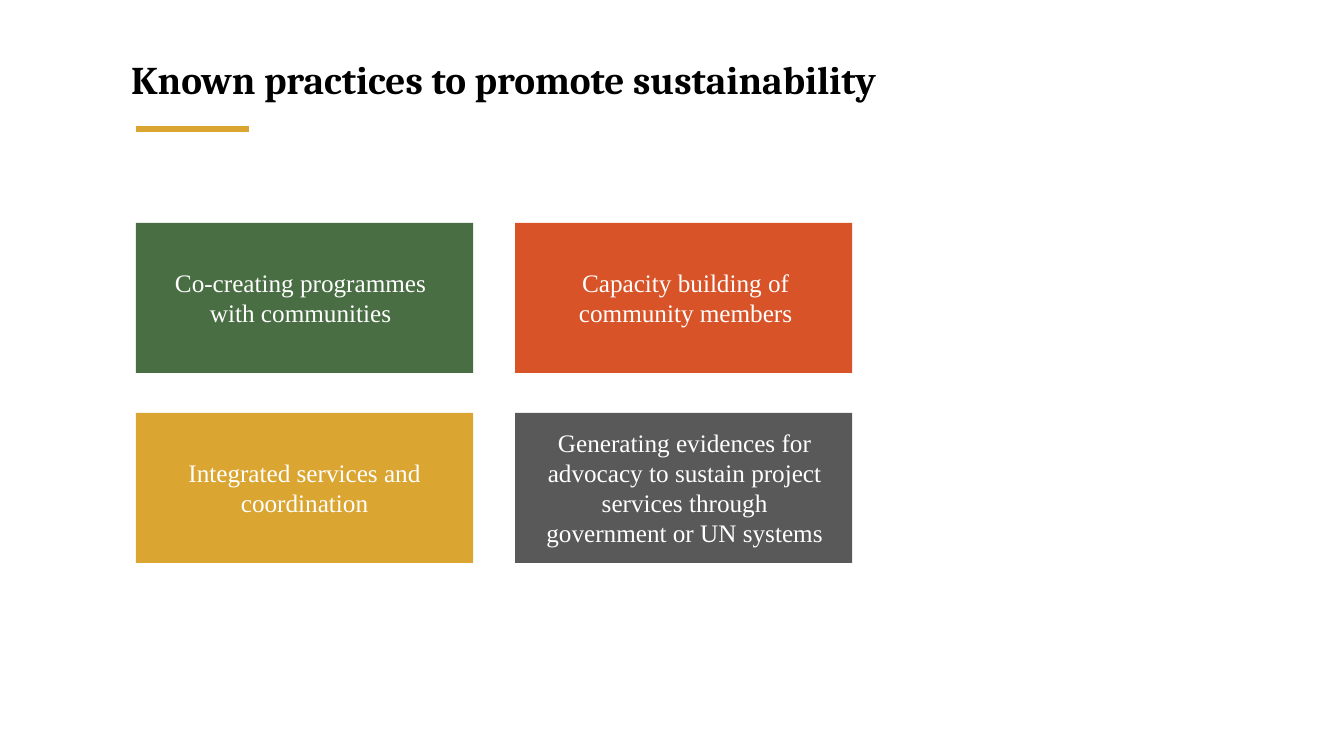
from lxml import etree
from pptx import Presentation
from pptx import util as u
from pptx.dml.color import RGBColor
from pptx.enum import shapes, text
from pptx.oxml.ns import qn

SCALE = 914400 / 100.8
HEX = {"black": "000000", "white": "FFFFFF", "green": "4A6E44",
       "red": "D85327", "gold": "DAA530", "gray": "595959"}


def emu(*px):
    return [u.Emu(round(n * SCALE)) for n in px]


class Deck:
    def __init__(self):
        self.prs = Presentation()
        self.prs.slide_width = u.Inches(13.33)
        self.prs.slide_height = u.Inches(7.5)
        self.slide = self.prs.slides.add_slide(self.prs.slide_layouts[5])

    def color(self, name):
        return RGBColor.from_string(HEX[name])

    def fill_text(self, shape, words, font, size, color, align, bold=False):
        frame = shape.text_frame
        frame.word_wrap = True
        frame.auto_size = text.MSO_AUTO_SIZE.NONE
        frame.vertical_anchor = text.MSO_ANCHOR.TOP
        para = frame.paragraphs[0]
        para.alignment = align
        run = para.add_run()
        run.text = words
        run.font.name = font
        run.font.size = u.Pt(size)
        run.font.bold = bold
        run.font.color.rgb = self.color(color)

    def title(self, words, x, y, w, h):
        shape = self.slide.shapes.title
        shape.left, shape.top, shape.width, shape.height = emu(x, y, w, h)
        self.fill_text(shape, words, "Cambria", 28, "black",
                       text.PP_ALIGN.LEFT, True)

    def rule(self, x1, x2, y, color, width):
        line = self.slide.shapes.add_connector(
            shapes.MSO_CONNECTOR.STRAIGHT, *emu(x1, y, x2, y))
        line.line.color.rgb = self.color(color)
        line.line.width = u.Pt(width)
        etree.SubElement(line._element.spPr, qn("a:effectLst"))

    def box(self, x, y, w, h, color):
        shape = self.slide.shapes.add_shape(
            shapes.MSO_SHAPE.RECTANGLE, *emu(x, y, w, h))
        shape.shadow.inherit = False
        shape.fill.solid()
        shape.fill.fore_color.rgb = self.color(color)
        shape.line.fill.background()

    def label(self, words, x, y, w, h):
        shape = self.slide.shapes.add_textbox(*emu(x, y, w, h))
        self.fill_text(shape, words, "Times New Roman", 18, "white",
                       text.PP_ALIGN.CENTER)


def main():
    deck = Deck()

    # Heading with accent rule
    deck.title("Known practices to promote sustainability", 121, 50, 1052, 57)
    deck.rule(136, 249, 129, "gold", 4.5)

    # Two by two grid: words, color, label inset, label width and height
    cards = [
        ("Co-creating programmes with communities", "green", 28, 273, 72),
        ("Capacity building of community members", "red", 34, 273, 72),
        ("Integrated services and coordination", "gold", 32, 273, 72),
        ("Generating evidences for advocacy to sustain project services "
         "through government or UN systems", "gray", 15, 309, 132),
    ]
    wide, high = 337, 150
    for i, (words, color, inset, w, h) in enumerate(cards):
        row, col = divmod(i, 2)
        x, y = 136 + col * 379, 223 + row * 190
        deck.box(x, y, wide, high, color)
        deck.label(words, x + inset, y + (high - h) // 2, w, h)

    deck.prs.save("out.pptx")


if __name__ == "__main__":
    main()
